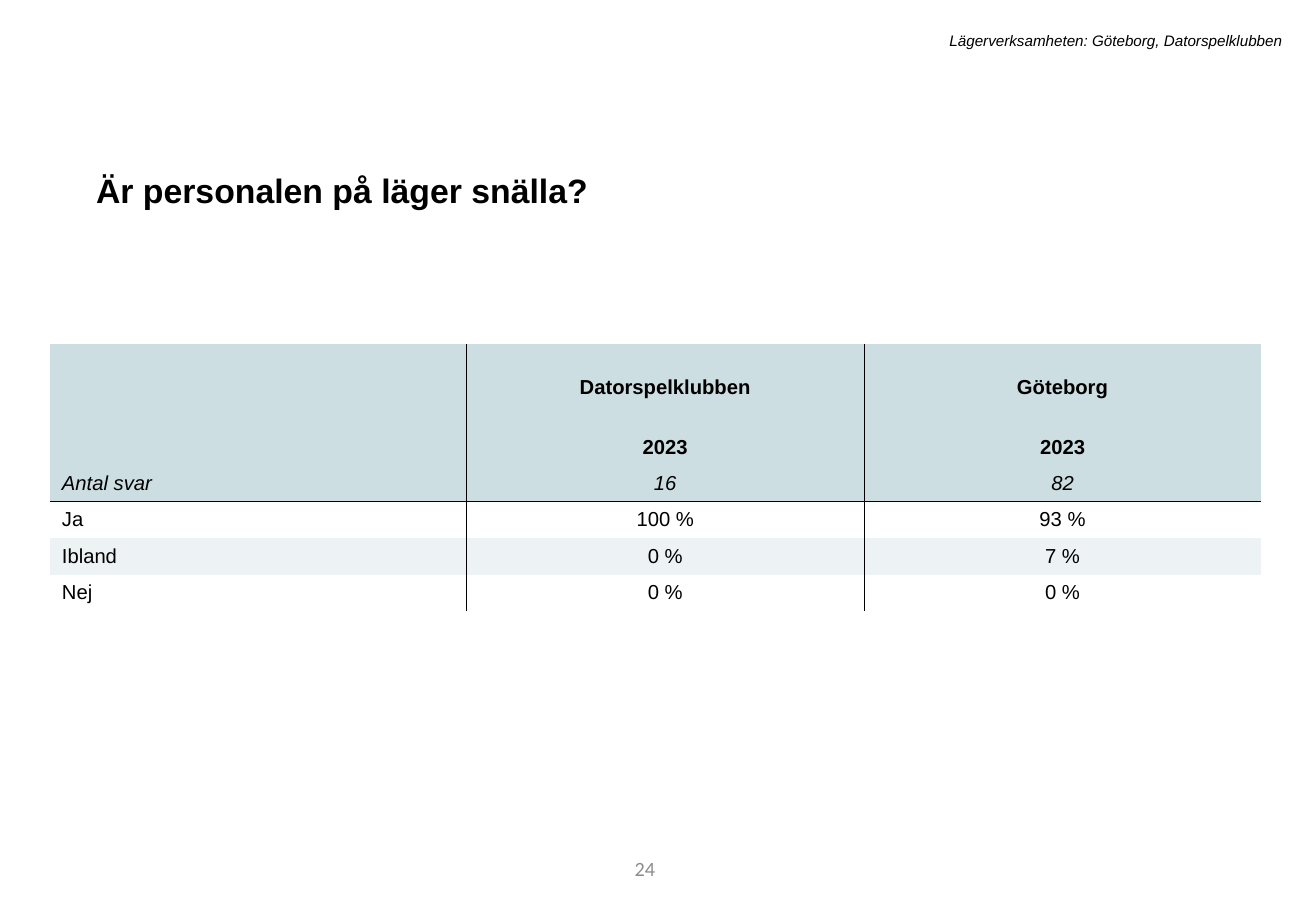
from lxml import etree
from pptx import Presentation
from pptx.dml.color import RGBColor
from pptx.enum.text import MSO_ANCHOR, MSO_AUTO_SIZE, PP_ALIGN
from pptx.oxml.ns import qn
from pptx.util import Inches, Pt

LEFT, CENTER, RIGHT = PP_ALIGN.LEFT, PP_ALIGN.CENTER, PP_ALIGN.RIGHT
TOP, MIDDLE, BOTTOM = MSO_ANCHOR.TOP, MSO_ANCHOR.MIDDLE, MSO_ANCHOR.BOTTOM
NO_AUTOFIT = MSO_AUTO_SIZE.NONE

BLACK = RGBColor(0x00, 0x00, 0x00)
GRAY = RGBColor(0x8C, 0x8C, 0x8C)
WHITE = RGBColor(0xFF, 0xFF, 0xFF)
HEADER_FILL = RGBColor(0xCC, 0xDE, 0xE1)
BAND_FILL = RGBColor(0xED, 0xF3, 0xF4)

TITLE_ONLY_LAYOUT = 5
COUNT_ROW = 2
COLUMN_WIDTHS = (3.43, 3.27, 3.27)
ROW_HEIGHTS = (0.5, 0.5, 0.3, 0.3, 0.3, 0.3)
ROWS = (
    ("", "Datorspelklubben", "Göteborg"),
    ("", "2023", "2023"),
    ("Antal svar", "16", "82"),
    ("Ja", "100 %", "93 %"),
    ("Ibland", "0 %", "7 %"),
    ("Nej", "0 %", "0 %"),
)


def write_text(text_frame, text, size=12, font="Arial", color=BLACK, bold=False,
               italic=False, align=LEFT):
    """Write one formatted paragraph and return it."""
    paragraph = text_frame.paragraphs[0]
    paragraph.alignment = align
    run = paragraph.add_run()
    run.text = text
    run.font.size = Pt(size)
    run.font.name = font
    run.font.color.rgb = color
    run.font.bold = bold
    run.font.italic = italic
    return paragraph


def place_frame(shape, left, top, width, height, anchor=TOP):
    """Position a text shape and return its wrapped text frame."""
    shape.left, shape.top = Inches(left), Inches(top)
    shape.width, shape.height = Inches(width), Inches(height)
    text_frame = shape.text_frame
    text_frame.word_wrap = True
    text_frame.auto_size = NO_AUTOFIT
    text_frame.vertical_anchor = anchor
    return text_frame


def add_label(slide, text, box, anchor=TOP, **text_format):
    """Add a text box holding one formatted line."""
    shape = slide.shapes.add_textbox(0, 0, 0, 0)
    write_text(place_frame(shape, *box, anchor=anchor), text, **text_format)


def set_borders(cell, visible_sides):
    """Draw thin black lines on the visible sides and none on the others."""
    properties = cell._tc.get_or_add_tcPr()
    for side in "LRTB":
        line = etree.SubElement(properties, qn(f"a:ln{side}"), w=str(Pt(0.25)))
        if side in visible_sides:
            fill = etree.SubElement(line, qn("a:solidFill"))
            etree.SubElement(fill, qn("a:srgbClr"), val=str(BLACK))
        else:
            etree.SubElement(line, qn("a:noFill"))


def format_cell(cell, text, row, column):
    """Fill in one table cell according to its row and column."""
    sides = ("L" if column > 0 else "") + ("R" if column < len(COLUMN_WIDTHS) - 1 else "")
    sides += {COUNT_ROW: "B", COUNT_ROW + 1: "T"}.get(row, "")
    set_borders(cell, sides)
    cell.fill.solid()
    if row <= COUNT_ROW:
        cell.fill.fore_color.rgb = HEADER_FILL
    else:
        cell.fill.fore_color.rgb = WHITE if (row - COUNT_ROW) % 2 else BAND_FILL
    cell.vertical_anchor = BOTTOM if row < COUNT_ROW else MIDDLE
    if text:
        write_text(cell.text_frame, text, bold=row < COUNT_ROW, italic=row == COUNT_ROW,
                   align=CENTER if column else LEFT)


def add_answer_table(slide):
    """Add the table of answers per club and city."""
    table = slide.shapes.add_table(
        len(ROWS), len(COLUMN_WIDTHS), Inches(0.41), Inches(2.83),
        Inches(sum(COLUMN_WIDTHS)), Inches(sum(ROW_HEIGHTS))).table
    table.first_row = False
    table.horz_banding = False
    for column, width in zip(table.columns, COLUMN_WIDTHS):
        column.width = Inches(width)
    for row, height in zip(table.rows, ROW_HEIGHTS):
        row.height = Inches(height)
    for row, texts in enumerate(ROWS):
        for column, text in enumerate(texts):
            format_cell(table.cell(row, column), text, row, column)


def add_title(slide, text):
    """Place the question in the title placeholder."""
    text_frame = place_frame(slide.shapes.title, 0.69, 1.28, 9.4, 0.47)
    paragraph = write_text(text_frame, text, size=20, bold=True)
    paragraph.line_spacing = 1.2
    paragraph.space_before = Pt(10)


def main():
    """Build and save the slide."""
    presentation = Presentation()
    presentation.slide_width = Inches(10.83)
    presentation.slide_height = Inches(7.5)
    slide = presentation.slides.add_slide(presentation.slide_layouts[TITLE_ONLY_LAYOUT])
    add_label(slide, "24", (3.05, 6.95, 2.44, 0.4), anchor=MIDDLE,
              font="Calibri", color=GRAY, align=RIGHT)
    add_title(slide, "Är personalen på läger snälla?")
    add_label(slide, "Lägerverksamheten: Göteborg, Datorspelklubben",
              (1.79, 0.21, 8.86, 0.25), size=9, italic=True, align=RIGHT)
    add_answer_table(slide)
    presentation.save("out.pptx")


if __name__ == "__main__":
    main()
